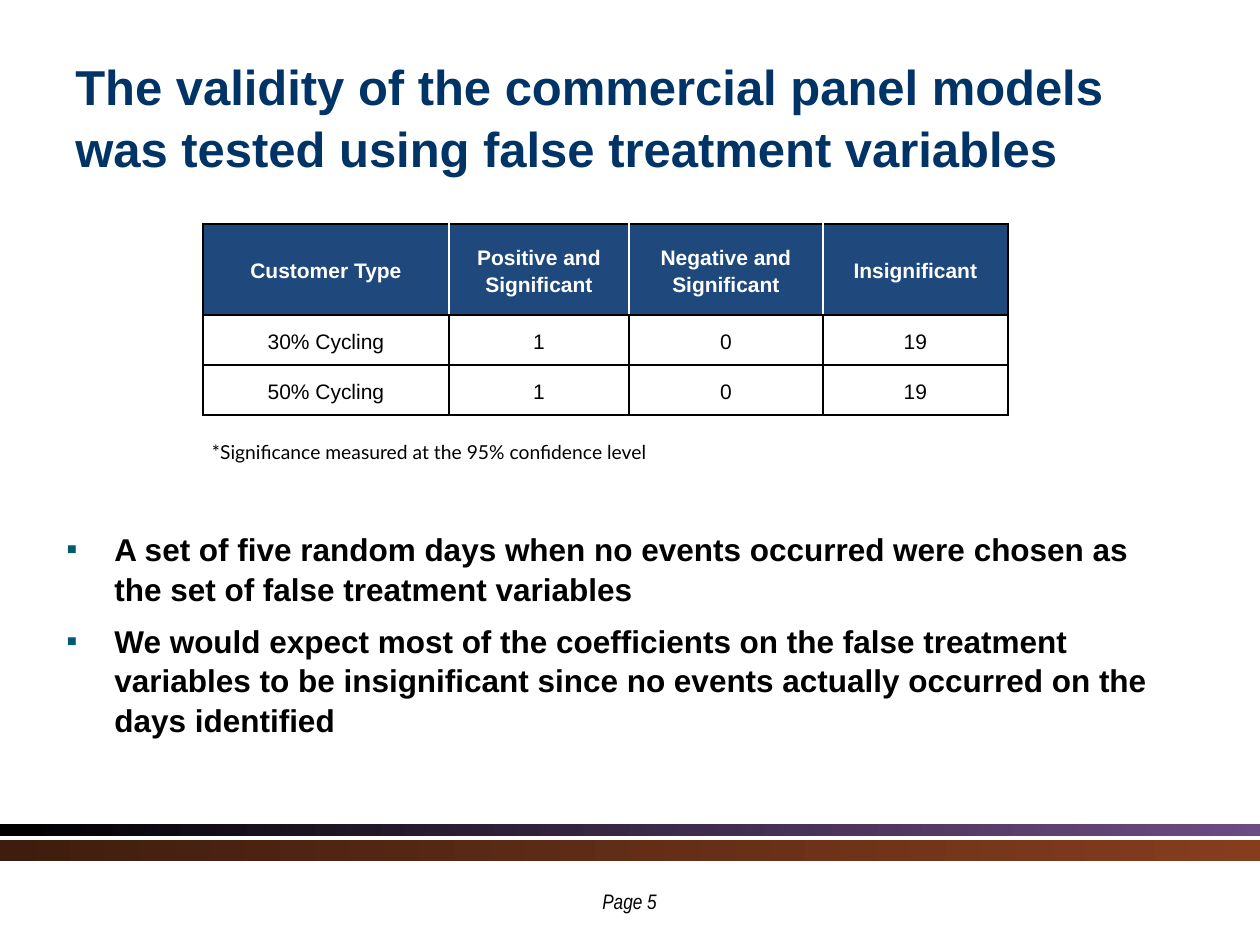
from lxml.etree import SubElement as Sub
from pptx import Presentation
from pptx.dml.color import RGBColor as Rgb
from pptx.enum.shapes import MSO_SHAPE as Shape
from pptx.enum.text import MSO_ANCHOR as Anchor, PP_ALIGN as Align
from pptx.oxml import parse_xml
from pptx.oxml.ns import nsdecls, qn
from pptx.util import Emu, Pt

BLACK = Rgb(0, 0, 0)
WHITE = Rgb(255, 255, 255)
NAVY = Rgb(0x00, 0x33, 0x66)
BLUE = Rgb(0x1F, 0x49, 0x7D)
TEAL = Rgb(0x00, 0x59, 0x6F)
PURPLE = Rgb(0x54, 0x2D, 0x6F)
BROWN = Rgb(0x3E, 0x1D, 0x0E)
RUST = Rgb(0x85, 0x3D, 0x1E)

TITLE = ("The validity of the commercial panel models "
         "was tested using false treatment variables")
ROWS = [
    ["Customer Type", "Positive and Significant",
     "Negative and Significant", "Insignificant"],
    ["30% Cycling", "1", "0", "19"],
    ["50% Cycling", "1", "0", "19"],
]
NOTE = "*Significance measured at the 95% confidence level"
POINTS = [
    "A set of five random days when no events occurred were chosen as "
    "the set of false treatment variables",
    "We would expect most of the coefficients on the false treatment "
    "variables to be insignificant since no events actually occurred on "
    "the days identified",
]
COLS = [246, 180, 194, 185]
HEIGHTS = [91, 50, 50, 49]


def px(n):
    return Emu(round(n * 914400 / 126))


def scale(box):
    return [px(n) for n in box]


def bullet(para, sign, color, indent):
    props = para._p.get_or_add_pPr()
    props.set("marL", str(px(indent)))
    props.set("indent", str(-px(indent)))
    Sub(Sub(props, qn("a:buClr")), qn("a:srgbClr")).set("val", str(color))
    Sub(props, qn("a:buFont")).set("typeface", "Arial")
    Sub(props, qn("a:buChar")).set("char", sign)


def write(frame, *lines, size=12, font="Arial", color=BLACK, bold=False,
          italic=False, align=Align.LEFT, space=1.0, gap=0, sign=None):
    """Fill a text frame with one paragraph per line."""
    frame.word_wrap = True
    for i, line in enumerate(lines):
        para = frame.add_paragraph() if i else frame.paragraphs[0]
        if sign:
            bullet(para, sign, TEAL, 48)
        para.alignment = align
        para.line_spacing = space
        if i:
            para.space_before = Pt(gap)
        run = para.add_run()
        run.text = line
        face = run.font
        face.name, face.size, face.color.rgb = font, Pt(size), color
        face.bold, face.italic = bold, italic


def label(slide, box, *lines, anchor=Anchor.TOP, **style):
    frame = slide.shapes.add_textbox(*scale(box)).text_frame
    frame.vertical_anchor = anchor
    write(frame, *lines, **style)


def edge(cell, **sides):
    """Draw 1 pt cell borders; a side given None has no line."""
    props = cell._tc.get_or_add_tcPr()
    for i, side in enumerate("LRTB"):
        color = sides.get(side)
        fill = (f'<a:solidFill><a:srgbClr val="{color}"/></a:solidFill>'
                if color is not None else "<a:noFill/>")
        props.insert(i, parse_xml(
            f'<a:ln{side} {nsdecls("a")} w="12700">{fill}</a:ln{side}>'))


def results(slide, box):
    last = len(COLS) - 1
    count = len(HEIGHTS)
    grid = slide.shapes.add_table(count, len(COLS), *scale(box)).table
    grid.first_row = grid.horz_banding = False
    for col, wide in zip(grid.columns, COLS):
        col.width = px(wide)
    for row, tall in zip(grid.rows, HEIGHTS):
        row.height = px(tall)
    for r in range(count):
        head, foot = r == 0, r == count - 1
        for c in range(len(COLS)):
            cell = grid.cell(r, c)
            cell.margin_left = cell.margin_right = px(9)
            cell.margin_top = cell.margin_bottom = 0
            cell.vertical_anchor = Anchor.BOTTOM if foot else Anchor.MIDDLE
            if head:
                cell.fill.solid()
                cell.fill.fore_color.rgb = BLUE
            else:
                cell.fill.background()
            if foot:
                edge(cell, T=BLACK)
                continue
            edge(cell, T=BLACK, B=BLACK,
                 L=WHITE if head and c > 0 else BLACK,
                 R=WHITE if head and c < last else BLACK)
            write(cell.text_frame, ROWS[r][c], bold=head, space=1.15,
                  color=WHITE if head else BLACK, align=Align.CENTER)
    note = grid.cell(count - 1, 0)
    note.merge(grid.cell(count - 1, last))
    write(note.text_frame, NOTE, size=11, font="Lato", space=1.15)


def band(slide, box, start, end, alpha=None):
    bar = slide.shapes.add_shape(Shape.RECTANGLE, *scale(box))
    bar.shadow.inherit = False
    bar.line.fill.background()
    bar.fill.gradient()
    bar.fill.gradient_angle = 0
    for stop, color in zip(bar.fill.gradient_stops, (start, end)):
        stop.color.rgb = color
    if alpha:
        tint = bar._element.spPr.findall(".//" + qn("a:srgbClr"))[-1]
        Sub(tint, qn("a:alpha")).set("val", str(alpha * 1000))


def footer(slide, box):
    left, top, wide, _ = box
    band(slide, (left, top, wide, 11), BLACK, PURPLE, alpha=85)
    band(slide, (left, top + 15, wide, 21), BROWN, RUST)
    label(slide, (left + 495, top + 57, 269, 28), "Page 5",
          font="Arial Narrow", italic=True, align=Align.CENTER)


def main():
    deck = Presentation()
    deck.slide_width, deck.slide_height = px(1260), px(945)
    slide = deck.slides.add_slide(deck.slide_layouts[6])
    footer(slide, (0, 825, 1260, 120))
    label(slide, (63, 38, 1134, 155), TITLE, anchor=Anchor.MIDDLE,
          size=28, color=NAVY, bold=True, space=1.05)
    results(slide, (203, 224, sum(COLS), sum(HEIGHTS)))
    label(slide, (54, 522, 1140, 286), *POINTS, size=18, bold=True,
          space=1.05, gap=7, sign="▪")
    deck.save("out.pptx")


if __name__ == "__main__":
    main()
